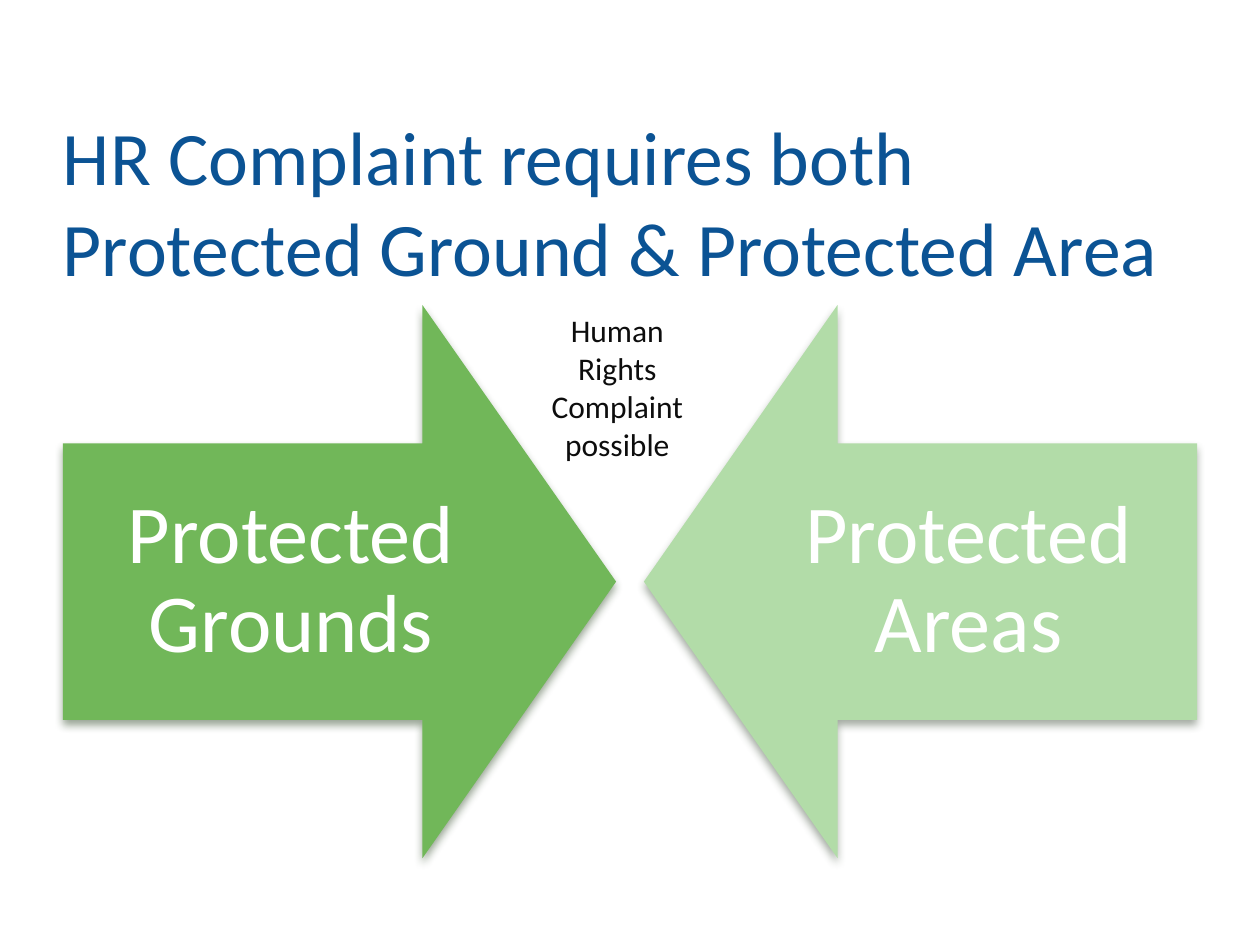
"""Build a slide where two facing arrows show what a complaint requires."""
from lxml.etree import SubElement
from pptx import Presentation
from pptx.dml.color import RGBColor
from pptx.enum.shapes import MSO_SHAPE as Shape
from pptx.enum.text import MSO_ANCHOR as Anchor, PP_ALIGN as Align
from pptx.oxml.ns import qn
from pptx.util import Cm, Pt

TITLE = "HR Complaint requires both Protected Ground & Protected Area"
CAPTION = ["Human Rights Complaint", "possible"]
ARROWS = [
    {"text": "Protected Grounds", "fill": "71B759", "shadow": "27411E", "rotation": 270},
    {"text": "Protected Areas", "fill": "B2DCA8", "shadow": "3E4E3A", "rotation": 90},
]

THEME = {
    "font": "Calibri",
    "title": {"size": 43.2, "color": "0B5394"},
    "label": {"size": 47, "color": "FFFFFF"},
    "caption": {"size": 18, "color": "0D0D0D"},
}

WIDTH, HEIGHT, MARGIN = 25.4, 19.05, 1.27
ARROW_TOP, ARROW_SIZE, LABEL_WIDTH = 6.15, 11.15, 9.2
ARROW_HEAD = 0.35


def add_text(slide, box, lines, role, frame_format, paragraph_format):
    """Add a wrapped text box with one paragraph per line."""
    frame = slide.shapes.add_textbox(*map(Cm, box)).text_frame
    for name, value in {"word_wrap": True, **frame_format}.items():
        setattr(frame, name, value)
    frame.text = "\n".join(lines)
    style = THEME[role]
    for paragraph in frame.paragraphs:
        for name, value in paragraph_format.items():
            setattr(paragraph, name, value)
        font = paragraph.font
        font.name, font.size = THEME["font"], Pt(style["size"])
        font.color.rgb = RGBColor.from_string(style["color"])


def add_shadow(shape, color):
    """Give a shape a soft shadow straight below it."""
    shape.shadow.inherit = False
    effects = shape._element.spPr.find(qn("a:effectLst"))
    shadow = SubElement(effects, qn("a:outerShdw"), blurRad=str(Pt(4.5)),
                        dist=str(Pt(3)), dir="5400000", rotWithShape="0")
    tint = SubElement(shadow, qn("a:srgbClr"), val=color)
    SubElement(tint, qn("a:alpha"), val="48000")


def add_arrow(slide, left, arrow):
    """Add one square block arrow turned towards the slide centre."""
    shape = slide.shapes.add_shape(
        Shape.DOWN_ARROW, *map(Cm, (left, ARROW_TOP, ARROW_SIZE, ARROW_SIZE)))
    shape.rotation = arrow["rotation"]
    shape.adjustments[0], shape.adjustments[1] = 0.5, ARROW_HEAD
    shape.fill.solid()
    shape.fill.fore_color.rgb = RGBColor.from_string(arrow["fill"])
    shape.line.fill.background()
    add_shadow(shape, arrow["shadow"])


def main():
    """Create the presentation and save it."""
    presentation = Presentation()
    presentation.slide_width, presentation.slide_height = Cm(WIDTH), Cm(HEIGHT)
    slide = presentation.slides.add_slide(presentation.slide_layouts[6])

    sides = ("margin_left", "margin_top", "margin_right", "margin_bottom")
    label_frame = {**dict.fromkeys(sides, Cm(0.94)), "vertical_anchor": Anchor.MIDDLE}
    label_paragraph = {"alignment": Align.CENTER, "line_spacing": 0.9}
    right_edge = WIDTH - MARGIN
    arrow_lefts = (MARGIN, right_edge - ARROW_SIZE)
    label_lefts = (MARGIN, right_edge - LABEL_WIDTH)
    for arrow, arrow_left, label_left in zip(ARROWS, arrow_lefts, label_lefts):
        add_arrow(slide, arrow_left, arrow)
        label_box = (label_left, ARROW_TOP + ARROW_SIZE / 4, LABEL_WIDTH, ARROW_SIZE / 2)
        add_text(slide, label_box, [arrow["text"]], "label", label_frame, label_paragraph)

    title_frame = {**dict.fromkeys(sides, 0), "margin_top": Cm(0.13),
                   "vertical_anchor": Anchor.BOTTOM}
    add_text(slide, (MARGIN, 1.96, 23.06, 3.91), [TITLE], "title", title_frame,
             {"alignment": Align.LEFT})
    add_text(slide, (10.59, ARROW_TOP, 3.71, 3.33), CAPTION, "caption", {},
             {"alignment": Align.CENTER})
    presentation.save("out.pptx")


if __name__ == "__main__":
    main()
